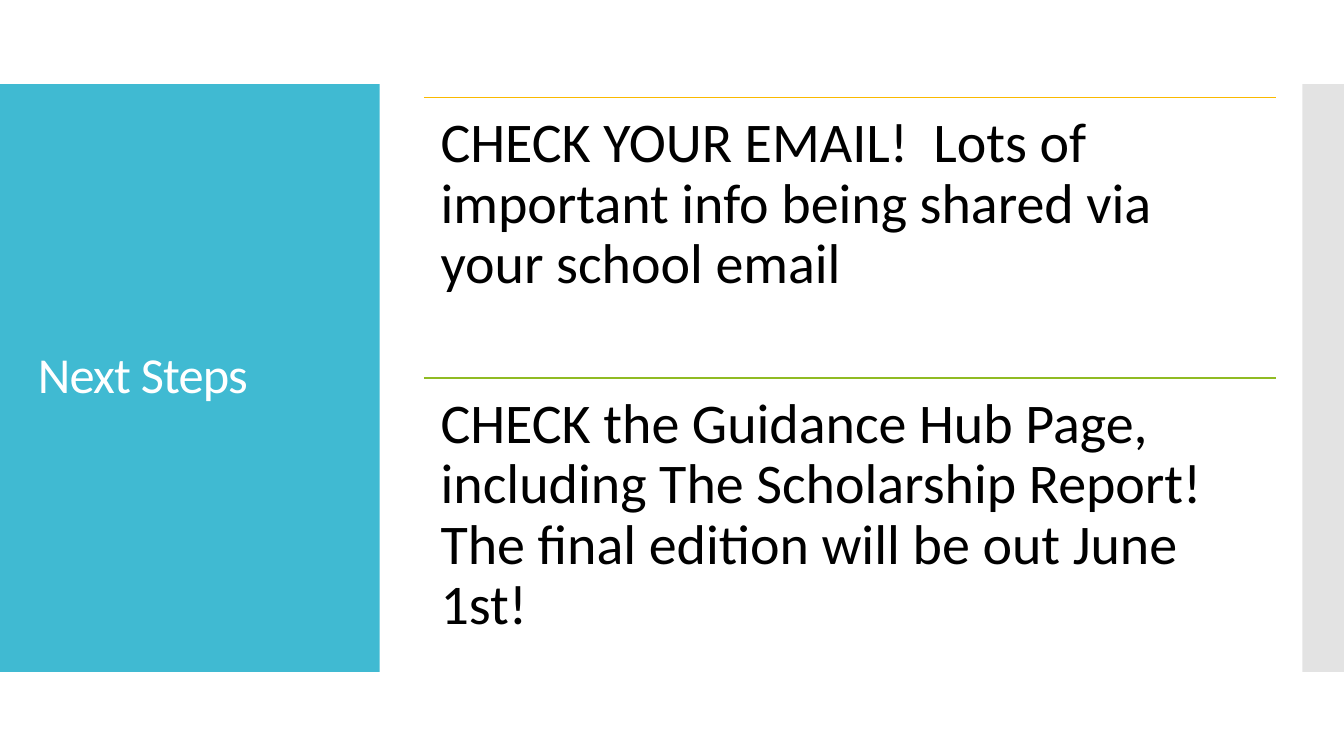
"""Build the Next Steps slide with a title panel and two ruled reminders."""
from dataclasses import dataclass

from lxml.etree import SubElement
from pptx import Presentation
from pptx.dml.color import RGBColor
from pptx.enum.shapes import MSO_CONNECTOR, MSO_SHAPE
from pptx.enum.text import MSO_ANCHOR, PP_ALIGN
from pptx.oxml.ns import qn
from pptx.shapes.autoshape import Shape
from pptx.slide import Slide
from pptx.util import Pt

WHITE = RGBColor(0xFF, 0xFF, 0xFF)
BLACK = RGBColor(0x00, 0x00, 0x00)
TEAL = RGBColor(0x40, 0xBA, 0xD2)
GRAY = RGBColor(0xC8, 0xC8, 0xC8)
AMBER = RGBColor(0xFA, 0xB9, 0x00)
GREEN = RGBColor(0x90, 0xBB, 0x23)

SLIDE_WIDTH = 960
SLIDE_HEIGHT = 540
PANEL_TOP = 60
PANEL_HEIGHT = 420
REMINDER_LEFT = 302.7
REMINDER_TOP = 69.75
REMINDER_WIDTH = 608.5
REMINDER_HEIGHT = 200.25


@dataclass(frozen=True)
class Panel:
    left: float
    width: float
    color: RGBColor
    opacity: int


@dataclass(frozen=True)
class Reminder:
    text: str
    line_color: RGBColor


PANELS = [Panel(0, 271.2, TEAL, 100), Panel(930.4, 29.6, GRAY, 50)]
REMINDERS = [
    Reminder("CHECK YOUR EMAIL!  Lots of important info being shared via your school email", AMBER),
    Reminder(
        "CHECK the Guidance Hub Page, including The Scholarship Report! "
        "The final edition will be out June 1st!",
        GREEN,
    ),
]


def add_panel(slide: Slide, panel: Panel) -> None:
    shape = slide.shapes.add_shape(
        MSO_SHAPE.RECTANGLE, Pt(panel.left), Pt(PANEL_TOP), Pt(panel.width), Pt(PANEL_HEIGHT)
    )
    shape.shadow.inherit = False
    shape.line.fill.background()
    shape.fill.solid()
    shape.fill.fore_color.rgb = panel.color
    if panel.opacity < 100:
        color = shape.element.spPr.find(qn("a:solidFill"))[0]
        SubElement(color, qn("a:alpha"), val=str(panel.opacity * 1000))


def add_text(
    slide: Slide,
    text: str,
    *,
    left: float,
    top: float,
    width: float,
    height: float,
    size: float,
    color: RGBColor,
    anchor: MSO_ANCHOR = MSO_ANCHOR.TOP,
    inset_x: float = 12,
    inset_y: float = 12,
    spacing: float = 0,
) -> Shape:
    shape = slide.shapes.add_textbox(Pt(left), Pt(top), Pt(width), Pt(height))
    frame = shape.text_frame
    frame.word_wrap = True
    frame.vertical_anchor = anchor
    frame.margin_left = frame.margin_right = Pt(inset_x)
    frame.margin_top = frame.margin_bottom = Pt(inset_y)
    paragraph = frame.paragraphs[0]
    paragraph.alignment = PP_ALIGN.LEFT
    paragraph.line_spacing = 0.9
    run = paragraph.add_run()
    run.text = text
    run.font.name = "Calibri"
    run.font.size = Pt(size)
    run.font.color.rgb = color
    if spacing:
        run.font._element.set("spc", str(round(spacing * 100)))
    return shape


def add_reminder(slide: Slide, reminder: Reminder, top: float) -> None:
    connector = slide.shapes.add_connector(
        MSO_CONNECTOR.STRAIGHT,
        Pt(REMINDER_LEFT), Pt(top), Pt(REMINDER_LEFT + REMINDER_WIDTH), Pt(top),
    )
    connector.line.color.rgb = reminder.line_color
    connector.line.width = Pt(0.85)
    SubElement(connector.element.spPr, qn("a:effectLst"))
    add_text(
        slide, reminder.text, left=REMINDER_LEFT, top=top, width=REMINDER_WIDTH,
        height=REMINDER_HEIGHT, size=40, color=BLACK,
    )


def main() -> None:
    presentation = Presentation()
    presentation.slide_width = Pt(SLIDE_WIDTH)
    presentation.slide_height = Pt(SLIDE_HEIGHT)
    slide = presentation.slides.add_slide(presentation.slide_layouts[6])
    slide.background.fill.solid()
    slide.background.fill.fore_color.rgb = WHITE
    for panel in PANELS:
        add_panel(slide, panel)
    add_text(
        slide, "Next Steps", left=20, top=88.5, width=232, height=362, size=36, color=WHITE,
        anchor=MSO_ANCHOR.MIDDLE, inset_x=7.2, inset_y=3.6, spacing=-0.6,
    )
    for index, reminder in enumerate(REMINDERS):
        add_reminder(slide, reminder, REMINDER_TOP + index * REMINDER_HEIGHT)
    presentation.save("out.pptx")


if __name__ == "__main__":
    main()
